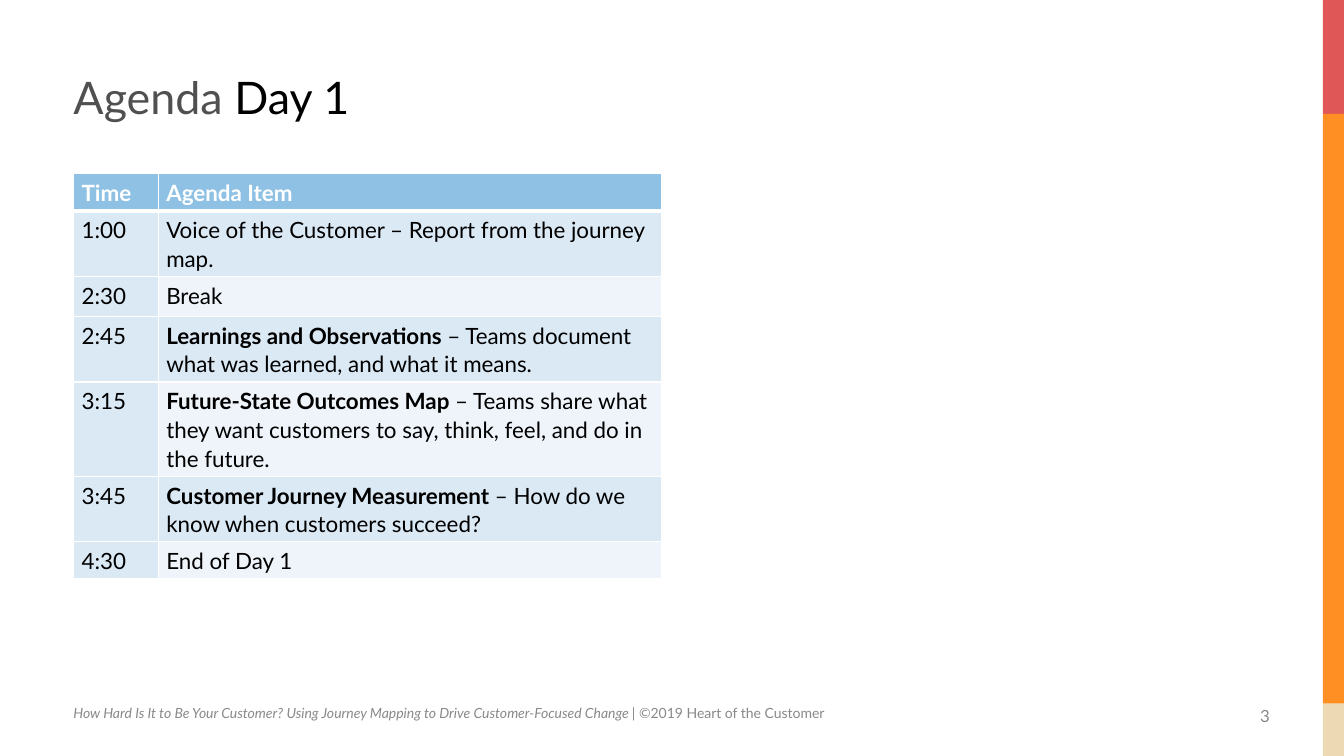
from dataclasses import dataclass

import pptx
import pptx.dml.color
import pptx.enum.shapes
import pptx.enum.text
import pptx.oxml
import pptx.oxml.ns
import pptx.util

Inches = pptx.util.Inches
RGBColor = pptx.dml.color.RGBColor
ALIGN = pptx.enum.text.PP_ALIGN
ANCHOR = pptx.enum.text.MSO_ANCHOR

WHITE = RGBColor(0xFF, 0xFF, 0xFF)
BLACK = RGBColor(0, 0, 0)
DARK_GRAY = RGBColor(0x50, 0x50, 0x50)
GRAY = RGBColor(0x89, 0x89, 0x89)
RED = RGBColor(0xDF, 0x57, 0x57)
ORANGE = RGBColor(0xFF, 0x8F, 0x22)
SAND = RGBColor(0xED, 0xD9, 0xB4)
HEADER_BLUE = RGBColor(0x8E, 0xC1, 0xE4)
BAND_BLUE = RGBColor(0xDB, 0xE9, 0xF5)
PALE_BLUE = RGBColor(0xEE, 0xF4, 0xFA)
FONT = "Lato"


@dataclass
class Band:
    top: float
    height: float
    color: RGBColor


@dataclass
class AgendaRow:
    time: str
    topic: str
    detail: str
    height: float


BANDS = [Band(0, 1.13, RED), Band(1.13, 5.85, ORANGE), Band(6.98, 0.52, SAND)]

AGENDA = [
    AgendaRow("Time", "Agenda Item", "", 0.37),
    AgendaRow("1:00", "", "Voice of the Customer – Report from the journey map.", 0.65),
    AgendaRow("2:30", "", "Break", 0.4),
    AgendaRow("2:45", "Learnings and Observations ",
              "– Teams document what was learned, and what it means.", 0.65),
    AgendaRow("3:15", "Future-State Outcomes Map ",
              "– Teams share what they want customers to say, think, feel, "
              "and do in the future.", 0.93),
    AgendaRow("3:45", "Customer Journey Measurement ",
              "– How do we know when customers succeed?", 0.65),
    AgendaRow("4:30", "", "End of Day 1", 0.36),
]


def add_run(p, text: str, *, size: float, color: RGBColor,
            bold: bool = False, italic: bool = False) -> None:
    r = p.add_run()
    r.text = text
    r.font.name = FONT
    r.font.size = pptx.util.Pt(size)
    r.font.bold = bold
    r.font.italic = italic
    r.font.color.rgb = color


def add_box(s, left: float, top: float, width: float, height: float, *,
            align=ALIGN.LEFT, anchor=ANCHOR.TOP, spacing: float = 1.0):
    sp = s.shapes.add_textbox(Inches(left), Inches(top), Inches(width), Inches(height))
    tf = sp.text_frame
    tf.word_wrap = True
    tf.vertical_anchor = anchor
    p = tf.paragraphs[0]
    p.alignment = align
    p.line_spacing = spacing
    return p


def add_band(s, band: Band) -> None:
    sp = s.shapes.add_shape(pptx.enum.shapes.MSO_SHAPE.RECTANGLE, Inches(13.12),
                            Inches(band.top), Inches(0.22), Inches(band.height))
    sp.shadow.inherit = False
    sp.fill.solid()
    sp.fill.fore_color.rgb = band.color
    sp.line.fill.background()


def set_borders(cell, bottom: float, top: float) -> None:
    tc_pr = cell._tc.get_or_add_tcPr()
    widths = {"lnL": 1, "lnR": 1, "lnT": top, "lnB": bottom}
    for i, (tag, width) in enumerate(widths.items()):
        tc_pr.insert(i, pptx.oxml.parse_xml(
            f'<a:{tag} {pptx.oxml.ns.nsdecls("a")} w="{pptx.util.Pt(width)}">'
            f'<a:solidFill><a:srgbClr val="{WHITE}"/></a:solidFill></a:{tag}>'))


def format_cell(cell, fill: RGBColor, bottom: float, top: float):
    cell.margin_left = cell.margin_right = Inches(0.08)
    cell.margin_top = cell.margin_bottom = Inches(0.04)
    cell.fill.solid()
    cell.fill.fore_color.rgb = fill
    set_borders(cell, bottom, top)
    p = cell.text_frame.paragraphs[0]
    p.line_spacing = 1.07
    return p


def add_agenda(s, rows: list[AgendaRow]) -> None:
    height = sum(row.height for row in rows)
    table = s.shapes.add_table(len(rows), 2, Inches(0.73), Inches(1.72),
                               Inches(5.83), Inches(height)).table
    for column, width in zip(table.columns, (0.84, 4.99)):
        column.width = Inches(width)
    for i, row in enumerate(rows):
        header = i == 0
        table.rows[i].height = Inches(row.height)
        color = WHITE if header else BLACK
        fill = HEADER_BLUE if header else BAND_BLUE
        item_fill = PALE_BLUE if i and i % 2 == 0 else fill
        bottom, top = (3 if header else 1), (3 if i == 1 else 1)
        p = format_cell(table.cell(i, 0), fill, bottom, top)
        add_run(p, row.time, size=16, color=color, bold=header)
        p = format_cell(table.cell(i, 1), item_fill, bottom, top)
        for text, bold in ((row.topic, True), (row.detail, False)):
            if text:
                add_run(p, text, size=16, color=color, bold=bold)


def main() -> None:
    prs = pptx.Presentation()
    prs.slide_width, prs.slide_height = Inches(13.33), Inches(7.5)
    s = prs.slides.add_slide(prs.slide_layouts[6])
    for band in BANDS:
        add_band(s, band)

    p = add_box(s, 12.34, 6.95, 0.41, 0.3, align=ALIGN.CENTER)
    add_run(p, "3", size=12, color=GRAY)

    p = add_box(s, 0.63, 6.94, 9.63, 0.27)
    add_run(p, "How Hard Is It to Be Your Customer? Using Journey Mapping to Drive "
            "Customer-Focused Change ", size=10, color=GRAY, italic=True)
    add_run(p, "| ©2019 Heart of the Customer", size=10, color=GRAY)

    p = add_box(s, 0.63, 0, 11.42, 1.28, anchor=ANCHOR.BOTTOM, spacing=0.9)
    add_run(p, "Agenda ", size=32, color=DARK_GRAY)
    add_run(p, "Day 1", size=32, color=BLACK)

    add_agenda(s, AGENDA)
    prs.save("out.pptx")


if __name__ == "__main__":
    main()
